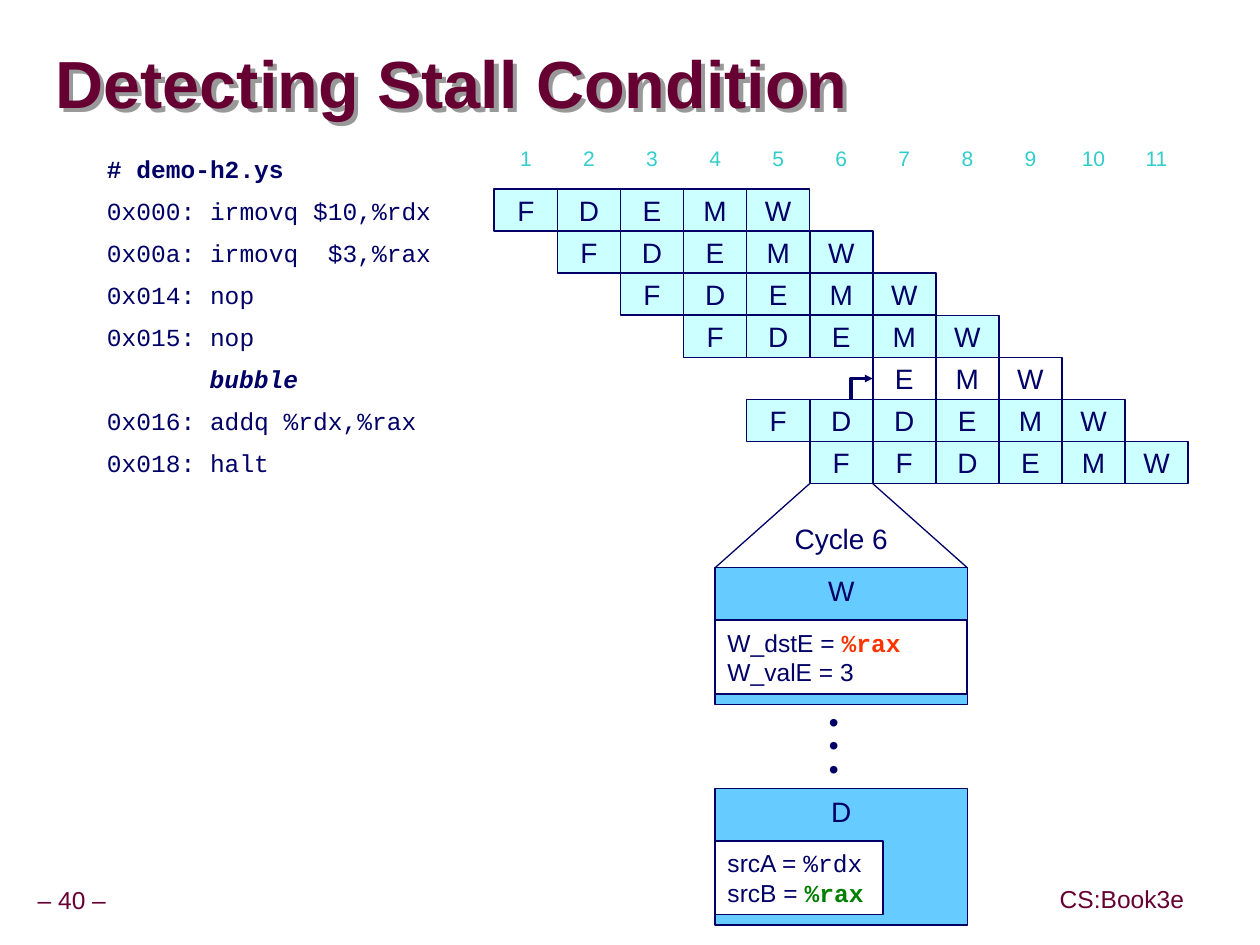
from lxml.etree import SubElement
from pptx import Presentation
from pptx.dml.color import RGBColor
from pptx.enum.shapes import MSO_CONNECTOR, MSO_SHAPE
from pptx.enum.text import MSO_ANCHOR, MSO_AUTO_SIZE, PP_ALIGN
from pptx.oxml.ns import qn
from pptx.util import Inches, Pt

NAVY = RGBColor(0x00, 0x00, 0x66)
MAROON = RGBColor(0x66, 0x00, 0x33)
TEAL = RGBColor(0x33, 0xCC, 0xCC)
PALE = RGBColor(0xCC, 0xFF, 0xFF)
BLUE = RGBColor(0x66, 0xCC, 0xFF)
RED = RGBColor(0xFF, 0x33, 0x00)
GREEN = RGBColor(0x00, 0x80, 0x00)
WHITE = RGBColor(0xFF, 0xFF, 0xFF)
GRAY = RGBColor(0x99, 0x99, 0x99)

COLUMN, ROW = 0.5, 1 / 3
GRID_LEFT, GRID_TOP = 3.92, 1.5

CODE = {"name": "Courier New", "size": Pt(14)}
CODE_BOLD = {**CODE, "bold": True}
STAGE = {"name": "Arial", "size": Pt(16)}
VALUE = {"name": "Arial", "size": Pt(14)}
CYCLE = {"name": "Arial", "size": Pt(12)}
TITLE = {"name": "Arial", "size": Pt(38), "bold": True}
NO_MARGINS = dict.fromkeys(
    ("margin_left", "margin_top", "margin_right", "margin_bottom"), 0)

PROGRAM = [
    ("# demo-h2.ys", CODE_BOLD, 0),
    ("0x000: irmovq $10,%rdx", CODE, 0),
    ("0x00a: irmovq  $3,%rax", CODE, 0),
    ("0x014: nop", CODE, 0),
    ("0x015: nop", CODE, 0),
    ("bubble", {**CODE_BOLD, "italic": True}, 1.63),
    ("0x016: addq %rdx,%rax", CODE, 0),
    ("0x018: halt", CODE, 0),
]
PIPELINE = [
    (0, "FDEMW", PALE), (1, "FDEMW", PALE), (2, "FDEMW", PALE),
    (3, "FDEMW", PALE), (6, "EMW", None), (4, "FDDEMW", PALE),
    (5, "FFDEMW", PALE),
]
DETAILS = [
    (9, "W", 4, [[("W_dstE = ", VALUE, NAVY), ("%rax", CODE_BOLD, RED)],
                 [("W_valE = 3", VALUE, NAVY)]]),
    (14.25, "D", 2.66, [[("srcA = ", VALUE, NAVY), ("%rdx", CODE, NAVY)],
                        [("srcB = ", VALUE, NAVY), ("%rax", CODE_BOLD, GREEN)]]),
]
FOOTERS = [("– 40 –", (-7.5, 16.47, 1.6, 0.93)),
           ("CS:Book3e", (8.7, 16.44, 2.5, 0.96))]


def point(column, row):
    """Return the slide position of a grid point."""
    return Inches(GRID_LEFT + column * COLUMN), Inches(GRID_TOP + row * ROW)


def area(column, row, columns, rows):
    """Return left, top, width and height of a grid area."""
    return *point(column, row), Inches(columns * COLUMN), Inches(rows * ROW)


def apply(target, formats):
    """Set every attribute in a dict of format values."""
    for name, value in formats.items():
        setattr(target, name, value)


def write(frame, lines, para_format, anchor=MSO_ANCHOR.MIDDLE):
    """Write lines of formatted spans into a text frame."""
    apply(frame, {"word_wrap": False, "vertical_anchor": anchor})
    for number, spans in enumerate(lines):
        para = frame.add_paragraph() if number else frame.paragraphs[0]
        apply(para, para_format)
        for text, formats, color in spans:
            span = para.add_run()
            span.text = text
            apply(span.font, formats)
            span.font.color.rgb = color


def add_label(page, place, lines, align=PP_ALIGN.CENTER, spacing=1.0):
    """Add a plain text box on the grid."""
    box = page.shapes.add_textbox(*area(*place))
    write(box.text_frame, lines, {"alignment": align, "line_spacing": spacing})
    return box


def add_box(page, place, lines, fill, align=PP_ALIGN.CENTER, weight=1,
            anchor=MSO_ANCHOR.MIDDLE):
    """Add an outlined rectangle with text on the grid."""
    box = page.shapes.add_shape(MSO_SHAPE.RECTANGLE, *area(*place))
    box.shadow.inherit = False
    if fill is None:
        box.fill.background()
    else:
        box.fill.solid()
        box.fill.fore_color.rgb = fill
    box.line.color.rgb = NAVY
    box.line.width = Pt(weight)
    write(box.text_frame, lines, {"alignment": align}, anchor)


def add_line(page, start, end):
    """Add a thin straight line between two grid points."""
    line = page.shapes.add_connector(MSO_CONNECTOR.STRAIGHT, *point(*start), *point(*end))
    line.line.color.rgb = NAVY
    line.line.width = Pt(0.75)
    SubElement(line._element.spPr, qn("a:effectLst"))


def add_bent_arrow(page, start, *corners):
    """Add an open path through grid points with an arrowhead at its end."""
    builder = page.shapes.build_freeform(*point(*start))
    builder.add_line_segments([point(*corner) for corner in corners], close=False)
    arrow = builder.convert_to_shape()
    arrow.shadow.inherit = False
    arrow.fill.background()
    arrow.line.color.rgb = NAVY
    arrow.line.width = Pt(2.25)
    SubElement(arrow.line._get_or_add_ln(), qn("a:tailEnd"), type="triangle", w="sm", len="sm")


def add_title(page, text):
    """Place the title and give its letters a shadow."""
    title = page.shapes.title
    places = area(-6.96, -3.69, 19.04, 2.55)
    apply(title, dict(zip(("left", "top", "width", "height"), places)))
    frame = title.text_frame
    write(frame, [[(text, TITLE, MAROON)]],
          {"alignment": PP_ALIGN.LEFT, "line_spacing": 0.87})
    apply(frame, {**NO_MARGINS, "auto_size": MSO_AUTO_SIZE.NONE, "word_wrap": True})
    title.fill.background()
    title.line.fill.background()
    effects = SubElement(title._element.spPr, qn("a:effectLst"))
    shadow = SubElement(effects, qn("a:outerShdw"), dist=str(Pt(3.5)),
                        dir="2700000", algn="ctr", rotWithShape="0")
    SubElement(shadow, qn("a:srgbClr"), val=str(GRAY))


def add_footer(page, text, place):
    """Add a one-line footer label without margins."""
    box = add_label(page, place, [[(text, VALUE, MAROON)]], spacing=0.9)
    apply(box.text_frame, NO_MARGINS)


def add_detail(page, row, stage, columns, values):
    """Add one stage of the cycle with its signal values."""
    add_box(page, (3.5, row, 4, 3.25), [[(stage, STAGE, NAVY)]], BLUE,
            weight=0.75, anchor=MSO_ANCHOR.TOP)
    add_box(page, (3.5, row + 1.25, columns, 1.75), values, WHITE, PP_ALIGN.LEFT)


def main():
    """Build the slide and save the deck."""
    deck = Presentation()
    apply(deck, {"slide_width": Inches(9.99), "slide_height": Inches(7.49)})
    page = deck.slides.add_slide(deck.slide_layouts[5])
    add_title(page, "Detecting Stall Condition")
    for text, place in FOOTERS:
        add_footer(page, text, place)
    for row, (text, formats, indent) in enumerate(PROGRAM, start=-1):
        add_label(page, (indent - 6.34, row, 5.66 - indent, 1),
                  [[(text, formats, NAVY)]], PP_ALIGN.LEFT)
    for column in range(11):
        add_label(page, (column, -1.25, 1, 1), [[(str(column + 1), CYCLE, TEAL)]])
    for row, (first, stages, fill) in enumerate(PIPELINE):
        for column, stage in enumerate(stages, start=first):
            add_box(page, (column, row, 1, 1), [[(stage, STAGE, NAVY)]], fill)
    add_bent_arrow(page, (5.66, 5), (5.66, 4.5), (6, 4.5))
    add_line(page, (5, 7), (3.5, 9))
    add_line(page, (6, 7), (7.5, 9))
    add_label(page, (3.5, 7.75, 4, 1.1), [[("Cycle 6", STAGE, NAVY)]])
    for detail in DETAILS:
        add_detail(page, *detail)
    add_label(page, (5.1, 12.3, 0.56, 2), [[("•", STAGE, NAVY)]] * 3, spacing=0.7)
    deck.save("out.pptx")


if __name__ == "__main__":
    main()
